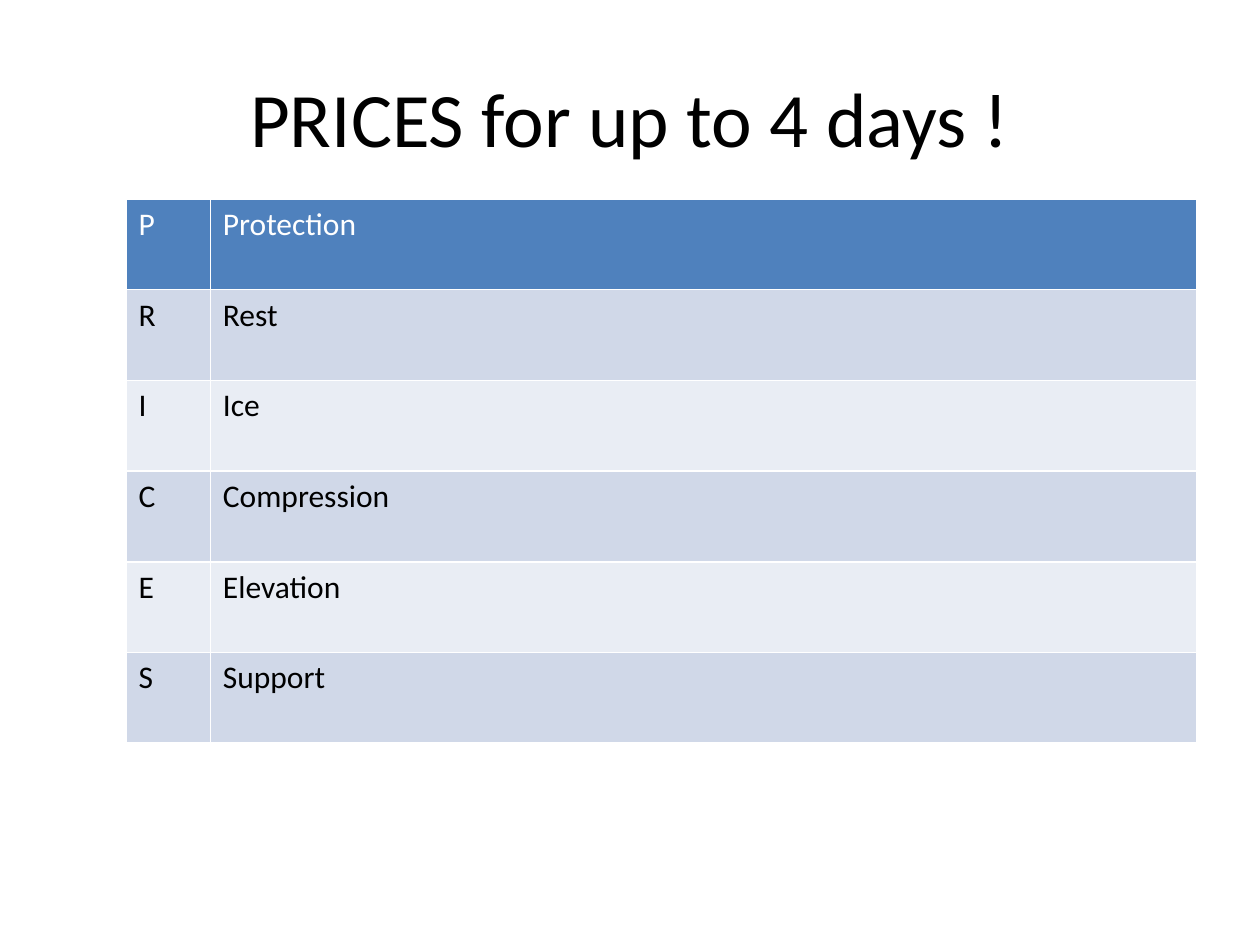
from dataclasses import dataclass

from pptx import Presentation
from pptx.dml.color import RGBColor as RGB
from pptx.enum.text import MSO_ANCHOR as Anchor, PP_ALIGN as Align
from pptx.util import Inches, Pt


@dataclass(frozen=True)
class Theme:
    font: str = "Calibri"
    title_size: int = 44
    body_size: int = 18
    text: str = "000000"
    header_text: str = "FFFFFF"
    header_fill: str = "4F81BD"
    bands: tuple = ("D0D8E8", "E9EDF4")


THEME = Theme()
TITLE = "PRICES for up to 4 days !"
STEPS = ["Protection", "Rest", "Ice", "Compression", "Elevation", "Support"]
COLUMN_WIDTHS = [0.67, 7.83]
ROW_HEIGHT = 0.72


def add_run(p, text, size, color):
    r = p.add_run()
    r.text = text
    r.font.name = THEME.font
    r.font.size = Pt(size)
    r.font.bold = False
    r.font.color.rgb = RGB.from_string(color)


def set_title(s, text):
    sp = s.shapes.title
    sp.left, sp.top = Inches(0.5), Inches(0.3)
    sp.width, sp.height = Inches(9), Inches(1.25)
    tf = sp.text_frame
    tf.word_wrap = True
    tf.vertical_anchor = Anchor.MIDDLE
    p = tf.paragraphs[0]
    p.alignment = Align.CENTER
    add_run(p, text, THEME.title_size, THEME.text)


def fill_cell(cell, text, fill, color):
    cell.fill.solid()
    cell.fill.fore_color.rgb = RGB.from_string(fill)
    add_run(cell.text_frame.paragraphs[0], text, THEME.body_size, color)


def add_steps_table(s, steps):
    table = s.shapes.add_table(
        len(steps), len(COLUMN_WIDTHS), Inches(1), Inches(1.58),
        Inches(sum(COLUMN_WIDTHS)), Inches(ROW_HEIGHT * len(steps))).table
    for column, width in zip(table.columns, COLUMN_WIDTHS):
        column.width = Inches(width)
    for i, step in enumerate(steps):
        table.rows[i].height = Inches(ROW_HEIGHT)
        if i == 0:
            fill, color = THEME.header_fill, THEME.header_text
        else:
            fill, color = THEME.bands[(i - 1) % 2], THEME.text
        for j, text in enumerate((step[0], step)):
            fill_cell(table.cell(i, j), text, fill, color)


def main():
    prs = Presentation()
    prs.slide_width, prs.slide_height = Inches(10), Inches(7.5)
    s = prs.slides.add_slide(prs.slide_layouts.get_by_name("Title Only"))
    set_title(s, TITLE)
    add_steps_table(s, STEPS)
    prs.save("out.pptx")


if __name__ == "__main__":
    main()
